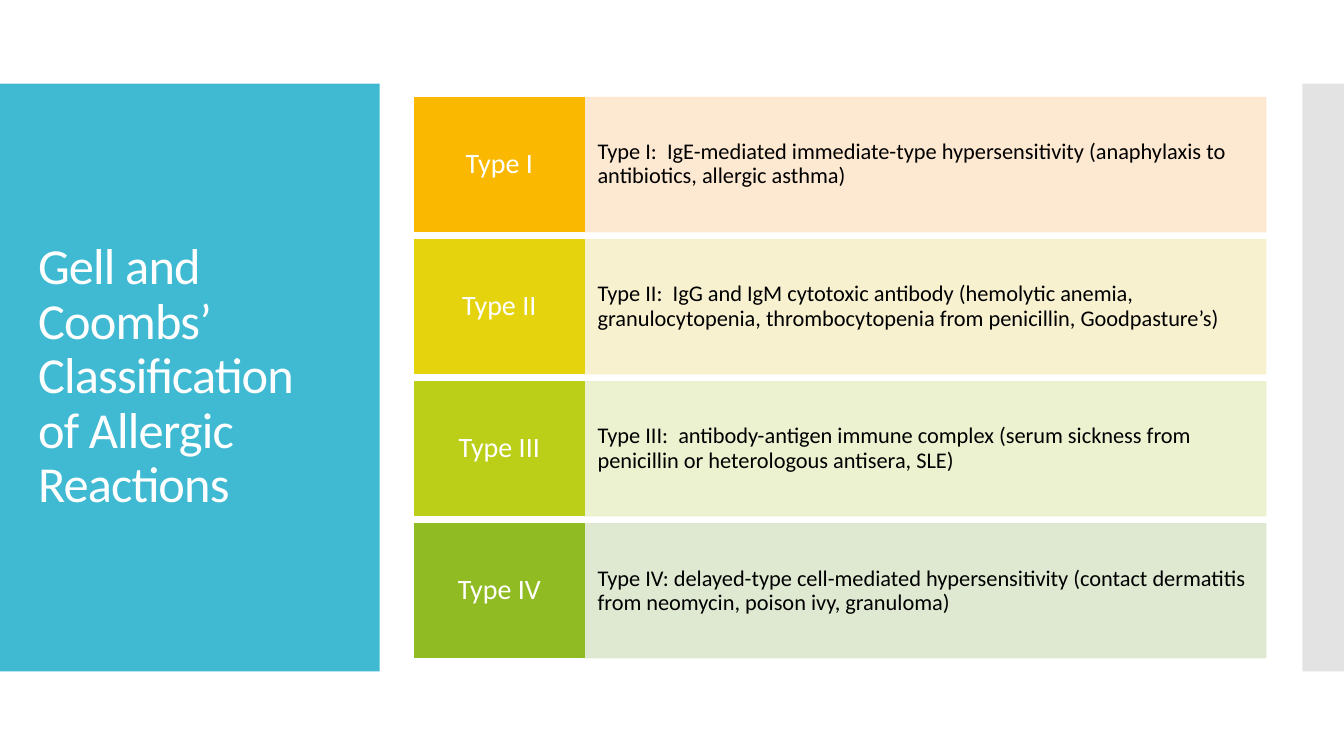
from lxml.etree import SubElement
from pptx import Presentation
from pptx.dml.color import RGBColor
from pptx.enum.shapes import MSO_SHAPE as Shape
from pptx.enum.text import MSO_ANCHOR as Anchor, PP_ALIGN as Align
from pptx.oxml.ns import qn
from pptx.util import Cm, Pt

TYPES = [
    ("Type I", "FAB900", "FDE6CC",
     "Type I:  IgE-mediated immediate-type hypersensitivity "
     "(anaphylaxis to antibiotics, allergic asthma)"),
    ("Type II", "E4D30D", "F7F0CB",
     "Type II:  IgG and IgM cytotoxic antibody (hemolytic anemia, "
     "granulocytopenia, thrombocytopenia from penicillin, Goodpasture’s)"),
    ("Type III", "BCCF18", "EBF0CB",
     "Type III:  antibody-antigen immune complex "
     "(serum sickness from penicillin or heterologous antisera, SLE)"),
    ("Type IV", "90BB23", "DCE7CD",
     "Type IV: delayed-type cell-mediated hypersensitivity "
     "(contact dermatitis from neomycin, poison ivy, granuloma)"),
]
ROW_TOP, ROW_PITCH, ROW_HEIGHT = 2.46, 3.58, 3.38
LABEL_LEFT, LABEL_WIDTH, DETAIL_WIDTH = 10.44, 4.29, 17.17


def color(value):
    return RGBColor.from_string(value)


class SlideBuilder:
    font = "Calibri"
    line_spacing = 0.9
    border = Pt(0.85)

    def __init__(self, slide):
        self.slide = slide

    def block(self, box, fill, opacity=100, outlined=True):
        shape = self.slide.shapes.add_shape(Shape.RECTANGLE, *map(Cm, box))
        shape.shadow.inherit = False
        shape.fill.solid()
        shape.fill.fore_color.rgb = color(fill)
        if outlined:
            shape.line.color.rgb = color(fill)
            shape.line.width = self.border
        else:
            shape.line.fill.background()
        if opacity < 100:
            for tint in shape._element.spPr.iter(qn("a:srgbClr")):
                SubElement(tint, qn("a:alpha"), val=str(opacity * 1000))
        return shape

    def add_text(self, shape, text, size, ink, align=Align.LEFT,
                 margins=(0.25, 0.13), tracking=0):
        """Fill a shape with one paragraph; margins are (sides, top and bottom)."""
        side, edge = map(Cm, margins)
        frame = shape.text_frame
        frame_format = {
            "word_wrap": True, "vertical_anchor": Anchor.MIDDLE,
            "margin_left": side, "margin_right": side,
            "margin_top": edge, "margin_bottom": edge,
        }
        for name, value in frame_format.items():
            setattr(frame, name, value)
        paragraph = frame.paragraphs[0]
        paragraph.alignment = align
        paragraph.line_spacing = self.line_spacing
        run = paragraph.add_run()
        run.text = text
        for name, value in {"name": self.font, "size": Pt(size)}.items():
            setattr(run.font, name, value)
        run.font.color.rgb = color(ink)
        if tracking:
            run._r.get_or_add_rPr().set("spc", str(round(tracking * 100)))

    def title(self, box, text):
        heading = self.slide.shapes.add_textbox(*map(Cm, box))
        self.add_text(heading, text, 36, "FFFFFF", tracking=-0.6)

    def type_row(self, top, label, label_fill, detail_fill, detail):
        detail_block = self.block(
            (LABEL_LEFT + LABEL_WIDTH, top, DETAIL_WIDTH, ROW_HEIGHT),
            detail_fill, opacity=90)
        self.add_text(detail_block, detail, 16, "000000", margins=(0.33, 0.86))
        label_block = self.block(
            (LABEL_LEFT, top, LABEL_WIDTH, ROW_HEIGHT), label_fill)
        self.add_text(label_block, label, 20, "FFFFFF", Align.CENTER, (0.23, 0.33))


def main():
    deck = Presentation()
    deck.slide_width, deck.slide_height = Cm(33.87), Cm(19.05)
    builder = SlideBuilder(deck.slides.add_slide(deck.slide_layouts[6]))

    builder.block((0, 2.11, 9.57, 14.81), "40BAD2", outlined=False)
    builder.block((32.82, 2.11, 1.05, 14.81), "C8C8C8", 50, outlined=False)
    builder.title((0.71, 3.12, 8.18, 12.78),
                  "Gell and Coombs’ Classification of Allergic Reactions")
    for row, allergy_type in enumerate(TYPES):
        builder.type_row(ROW_TOP + row * ROW_PITCH, *allergy_type)

    deck.save("out.pptx")


if __name__ == "__main__":
    main()
